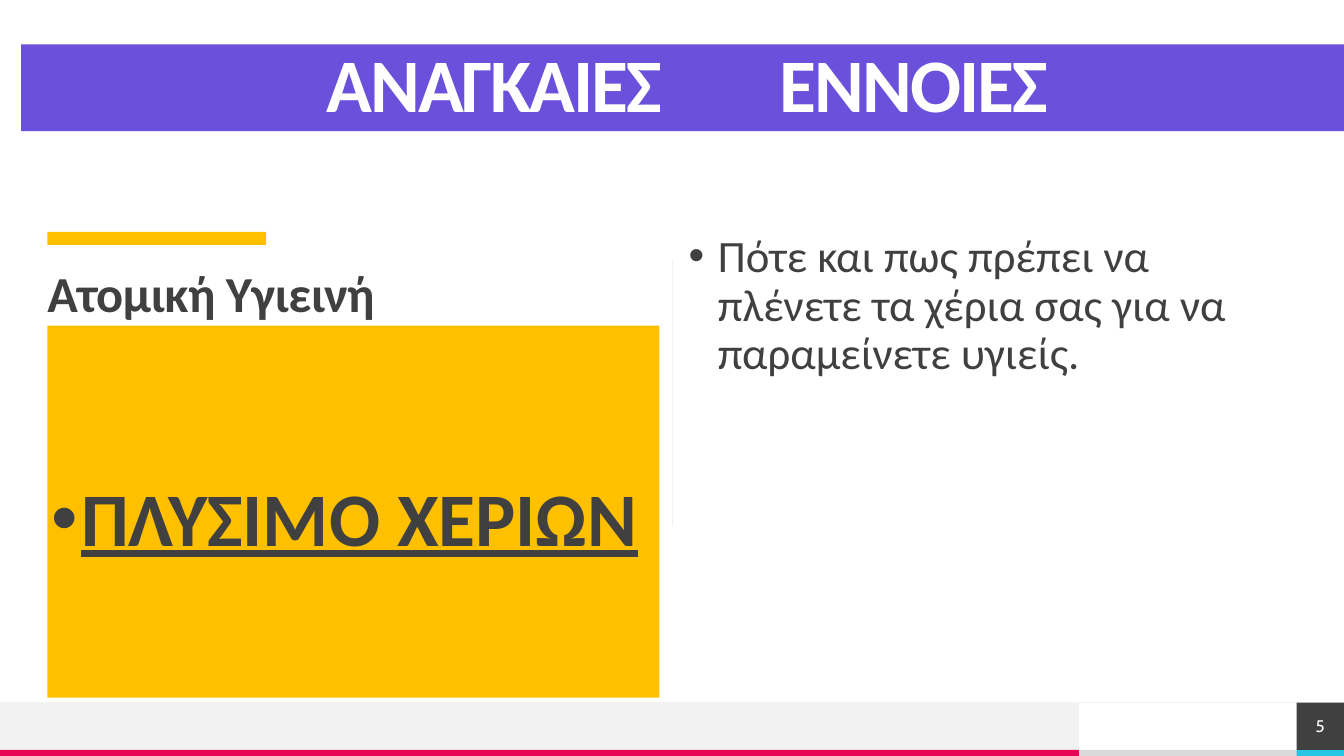
from dataclasses import dataclass

from lxml import etree
from pptx import Presentation
from pptx.dml.color import RGBColor
from pptx.enum.shapes import MSO_CONNECTOR, MSO_SHAPE
from pptx.enum.text import MSO_ANCHOR, MSO_AUTO_SIZE, PP_ALIGN
from pptx.oxml.ns import qn
from pptx.util import Emu, Pt

EMU_PER_PX = 9144  # 100 px to the inch
COLORS = {
    "purple": "6A50DB", "amber": "FFC000", "white": "FFFFFF", "dark": "404040",
    "pale": "F2F2F2", "grey": "DADADA", "crimson": "E80554", "cyan": "25C6E3",
}
LEFT, CENTER = PP_ALIGN.LEFT, PP_ALIGN.CENTER
TOP, MIDDLE = MSO_ANCHOR.TOP, MSO_ANCHOR.MIDDLE
RECTANGLE, STRAIGHT = MSO_SHAPE.RECTANGLE, MSO_CONNECTOR.STRAIGHT
NO_AUTOFIT = MSO_AUTO_SIZE.NONE
COMPARISON_LAYOUT = 4
BULLET_INDENT = 29


@dataclass
class Box:
    left: int
    top: int
    width: int
    height: int


@dataclass
class Band:
    box: Box
    color: str


@dataclass
class Rule:
    start: tuple[int, int]
    end: tuple[int, int]


BANDS = [
    Band(Box(1070, 744, 217, 6), "grey"),
    Band(Box(0, 697, 1070, 47), "pale"),
    Band(Box(0, 744, 1070, 6), "crimson"),
    Band(Box(1286, 744, 47, 6), "cyan"),
    Band(Box(47, 230, 217, 13), "amber"),
]
RULES = [Rule((1333, 697), (0, 697)), Rule((667, 258), (667, 522))]
NUMBER_BAND = Band(Box(1286, 697, 47, 47), "dark")


def px(length: int) -> Emu:
    return Emu(length * EMU_PER_PX)


def color(name: str) -> RGBColor:
    return RGBColor.from_string(COLORS[name])


def place(shape, box: Box) -> None:
    shape.left, shape.top = px(box.left), px(box.top)
    shape.width, shape.height = px(box.width), px(box.height)


def paint(shape, name: str) -> None:
    shape.fill.solid()
    shape.fill.fore_color.rgb = color(name)


def add_band(slide, band: Band):
    shape = slide.shapes.add_shape(RECTANGLE, 0, 0, 0, 0)
    place(shape, band.box)
    paint(shape, band.color)
    shape.line.fill.background()
    shape.shadow.inherit = False
    return shape


def add_rule(slide, rule: Rule) -> None:
    points = [px(value) for value in (*rule.start, *rule.end)]
    connector = slide.shapes.add_connector(STRAIGHT, *points)
    connector.line.color.rgb = color("pale")
    connector.line.width = Pt(0.5)
    etree.SubElement(connector._element.spPr, qn("a:effectLst"))


def set_frame(shape, anchor=TOP, left=0, top=0, right=0) -> None:
    """Set the anchor and the insets of a shape's text."""
    frame = shape.text_frame
    frame.word_wrap = True
    frame.auto_size = NO_AUTOFIT
    frame.vertical_anchor = anchor
    frame.margin_left, frame.margin_top = px(left), px(top)
    frame.margin_right, frame.margin_bottom = px(right), px(0)


def set_paragraph(paragraph, align=LEFT, line_spacing=0.9, bullet=False) -> None:
    paragraph.alignment = align
    paragraph.line_spacing = line_spacing
    paragraph.space_before = paragraph.space_after = Pt(0)
    properties = paragraph._p.get_or_add_pPr()
    indent = px(BULLET_INDENT) if bullet else 0
    properties.set("marL", str(indent))
    properties.set("indent", str(-indent))
    if bullet:
        font = etree.SubElement(properties, qn("a:buFont"))
        font.set("typeface", "Arial")
        etree.SubElement(properties, qn("a:buChar")).set("char", "•")
    else:
        etree.SubElement(properties, qn("a:buNone"))


def add_text(paragraph, text: str, size: int, *, font="Calibri", ink="dark",
             bold=False, underline=False, tracking=0.0) -> None:
    run = paragraph.add_run()
    run.text = text
    run.font.name = font
    run.font.size = Pt(size)
    run.font.bold = bold
    run.font.underline = underline
    run.font.color.rgb = color(ink)
    if tracking:
        run._r.get_or_add_rPr().set("spc", str(round(tracking * 100)))


def fill_title(title) -> None:
    place(title, Box(21, 44, 1312, 86))
    paint(title, "purple")
    set_frame(title, MIDDLE, left=9)
    paragraph = title.text_frame.paragraphs[0]
    set_paragraph(paragraph, CENTER)
    # The wide tracking of the space sets the gap between the words
    for text, tracking in (("ΑΝΑΓΚΑΙΕΣ", -1.5), (" ", 72), ("ΕΝΝΟΙΕΣ", -1.5)):
        add_text(paragraph, text, 54, ink="white", bold=True, tracking=tracking)


def fill_bodies(heading, topic, question) -> None:
    place(heading, Box(47, 267, 598, 39))
    set_frame(heading)
    paragraph = heading.text_frame.paragraphs[0]
    set_paragraph(paragraph)
    add_text(paragraph, "Ατομική Υγιεινή", 36, bold=True, tracking=-0.4)

    place(topic, Box(47, 323, 607, 369))
    paint(topic, "amber")
    set_frame(topic, top=154, right=17)
    paragraph = topic.text_frame.paragraphs[0]
    set_paragraph(paragraph, CENTER, bullet=True)
    add_text(paragraph, "ΠΛΥΣΙΜΟ ΧΕΡΙΩΝ", 54, bold=True, underline=True)

    place(question, Box(683, 147, 598, 570))
    set_frame(question, top=85)
    paragraph = question.text_frame.paragraphs[0]
    set_paragraph(paragraph, bullet=True)
    add_text(paragraph, "Πότε και πως πρέπει να πλένετε τα χέρια σας για να "
             "παραμείνετε υγιείς.", 32)


def add_slide_number(slide) -> None:
    number = add_band(slide, NUMBER_BAND)
    set_frame(number, MIDDLE)
    paragraph = number.text_frame.paragraphs[0]
    set_paragraph(paragraph, CENTER, 1.0)
    add_text(paragraph, "5", 12, font="Cabin", ink="white")


def main() -> None:
    presentation = Presentation()
    presentation.slide_width, presentation.slide_height = px(1333), px(750)
    layout = presentation.slide_layouts[COMPARISON_LAYOUT]
    slide = presentation.slides.add_slide(layout)
    title, heading, topic, spare, question = slide.placeholders
    spare._element.getparent().remove(spare._element)

    for band in BANDS:
        add_band(slide, band)
    for rule in RULES:
        add_rule(slide, rule)
    fill_title(title)
    fill_bodies(heading, topic, question)
    add_slide_number(slide)
    presentation.save("out.pptx")


if __name__ == "__main__":
    main()
